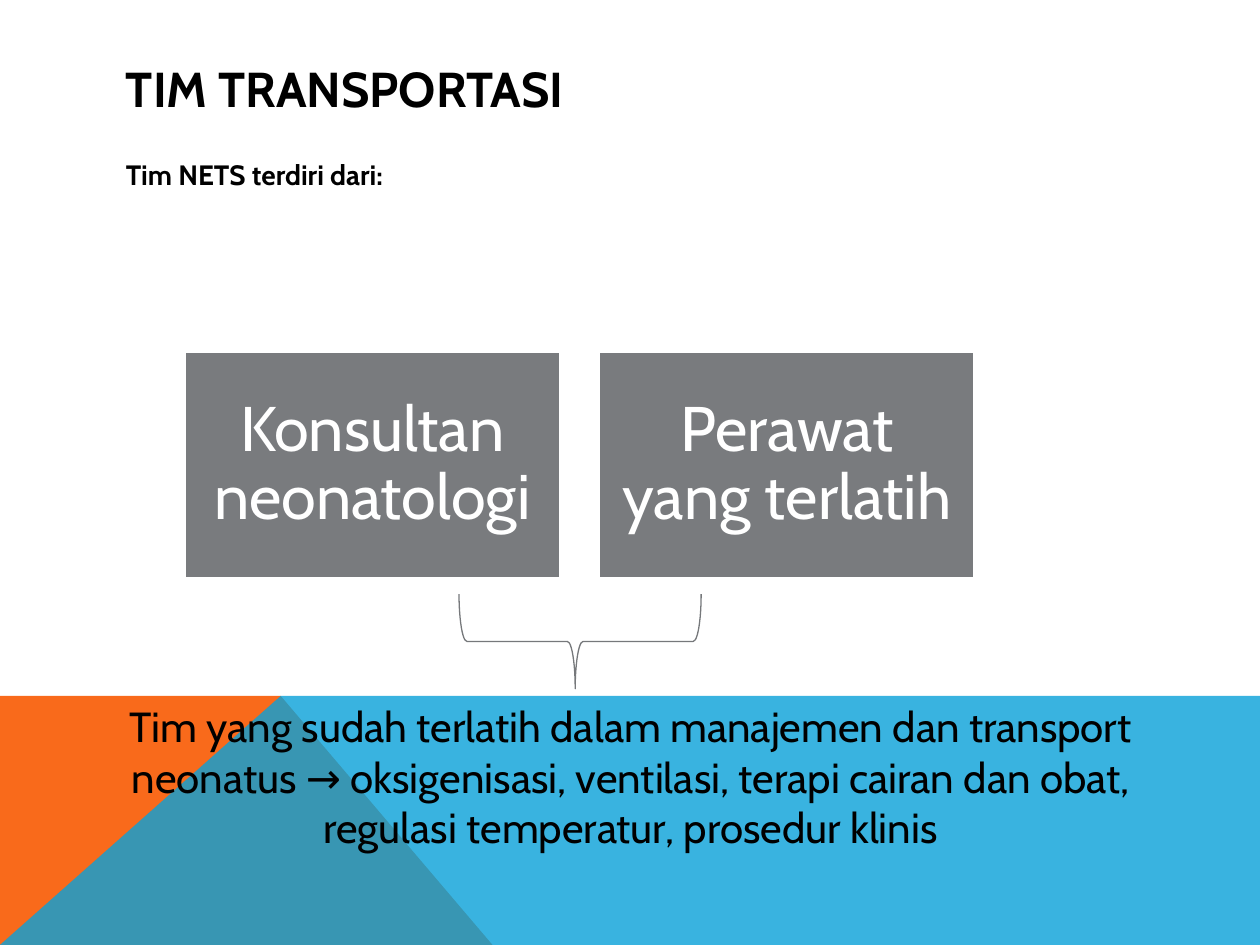
from pptx import Presentation
from pptx.dml.color import RGBColor
from pptx.enum.shapes import MSO_SHAPE
from pptx.enum.text import MSO_ANCHOR, PP_ALIGN
from pptx.oxml.ns import qn
from pptx.util import Cm, Pt

RECTANGLE, LEFT_BRACE = MSO_SHAPE.RECTANGLE, MSO_SHAPE.LEFT_BRACE
TOP, MIDDLE = MSO_ANCHOR.TOP, MSO_ANCHOR.MIDDLE
LEFT, CENTER = PP_ALIGN.LEFT, PP_ALIGN.CENTER
BLACK = RGBColor(0x00, 0x00, 0x00)
WHITE = RGBColor(0xFF, 0xFF, 0xFF)
ORANGE = RGBColor(0xF9, 0x6A, 0x1B)
BLUE = RGBColor(0x08, 0xA1, 0xD9)
GREY = RGBColor(0x79, 0x7B, 0x7E)
BRACE_GREY = RGBColor(0x76, 0x78, 0x7B)
FONT = "Cabin"

# All lengths are in centimetres.
WIDTH, HEIGHT = 25.4, 19.05
BAND_TOP, PEAK = 14.03, 5.66
BANDS = [  # corners, colour, opacity in percent
    ([(0, HEIGHT), (0, BAND_TOP), (PEAK, BAND_TOP), (9.93, HEIGHT)], ORANGE, 100),
    ([(0, HEIGHT), (PEAK, BAND_TOP), (WIDTH, BAND_TOP), (WIDTH, HEIGHT)], BLUE, 80),
]
TEXTS = [  # wording, area, anchor, alignment, space before, font
    ("TIM TRANSPORTASI", (2.29, 1.02, 20.88, 1.52), MIDDLE, LEFT, 0,
     {"size": Pt(28), "bold": True}),
    ("Tim NETS terdiri dari:", (2.29, 3.05, 20.88, 9.93), TOP, LEFT, 8,
     {"size": Pt(16), "bold": True}),
    ("Tim yang sudah terlatih dalam manajemen dan transport neonatus → oksigenisasi, "
     "ventilasi, terapi cairan dan obat, regulasi temperatur, prosedur klinis",
     (1.07, 14, 23.29, 3.33), TOP, CENTER, 0, {"size": Pt(24)}),
]
MEMBERS = ["Konsultan neonatologi", "Perawat yang terlatih"]
MEMBER_LEFT, MEMBER_TOP, MEMBER_WIDTH, MEMBER_HEIGHT = 3.71, 7.09, 7.59, 4.57
MEMBER_GAP, MEMBER_INSET = 0.77, 0.38
BRACE_AREA = (10.74, 10.49, 1.91, 4.88)
BRACE_ADJUSTMENTS = (0.083, 0.48)


def lengths(values):
    return [Cm(value) for value in values]


def add_band(page, corners, colour, opacity):
    points = [lengths(corner) for corner in corners]
    builder = page.shapes.build_freeform(*points[0])
    builder.add_line_segments(points[1:], close=True)
    band = builder.convert_to_shape()
    band.shadow.inherit = False
    band.fill.solid()
    band.fill.fore_color.rgb = colour
    band.line.fill.background()
    if opacity < 100:
        colour_node = band.fill._xPr.find(qn("a:solidFill"))[0]
        alpha = colour_node.makeelement(qn("a:alpha"), {"val": str(opacity * 1000)})
        colour_node.append(alpha)


def write(box, wording, anchor, alignment, font, spacing):
    frame = box.text_frame
    frame.word_wrap = True
    frame.vertical_anchor = anchor
    para = frame.paragraphs[0]
    para.alignment = alignment
    for name, value in spacing.items():
        setattr(para, name, value)
    span = para.add_run()
    span.text = wording
    span.font.color.rgb = font.get("colour", BLACK)
    for name in ("size", "bold"):
        setattr(span.font, name, font.get(name))
    span.font.name = FONT


def add_member(page, index, wording):
    left = MEMBER_LEFT + index * (MEMBER_WIDTH + MEMBER_GAP)
    area = (left, MEMBER_TOP, MEMBER_WIDTH, MEMBER_HEIGHT)
    box = page.shapes.add_shape(RECTANGLE, *lengths(area))
    box.shadow.inherit = False
    box.fill.solid()
    box.fill.fore_color.rgb = GREY
    box.line.color.rgb = WHITE
    box.line.width = Pt(2)
    for side in ("left", "top", "right", "bottom"):
        setattr(box.text_frame, f"margin_{side}", Cm(MEMBER_INSET))
    write(box, wording, MIDDLE, CENTER, {"size": Pt(36), "colour": WHITE},
          {"line_spacing": 0.9})


def add_brace(page):
    brace = page.shapes.add_shape(LEFT_BRACE, *lengths(BRACE_AREA))
    brace.shadow.inherit = False
    brace.rotation = 270
    for index, value in enumerate(BRACE_ADJUSTMENTS):
        brace.adjustments[index] = value
    brace.fill.background()
    brace.line.color.rgb = BRACE_GREY
    brace.line.width = Pt(0.75)


def main():
    deck = Presentation()
    deck.slide_width, deck.slide_height = Cm(WIDTH), Cm(HEIGHT)
    page = deck.slides.add_slide(deck.slide_layouts[6])
    for band in BANDS:
        add_band(page, *band)
    for wording, area, anchor, alignment, before, font in TEXTS:
        box = page.shapes.add_textbox(*lengths(area))
        write(box, wording, anchor, alignment, font, {"space_before": Pt(before)})
    for index, wording in enumerate(MEMBERS):
        add_member(page, index, wording)
    add_brace(page)
    deck.save("out.pptx")


if __name__ == "__main__":
    main()
